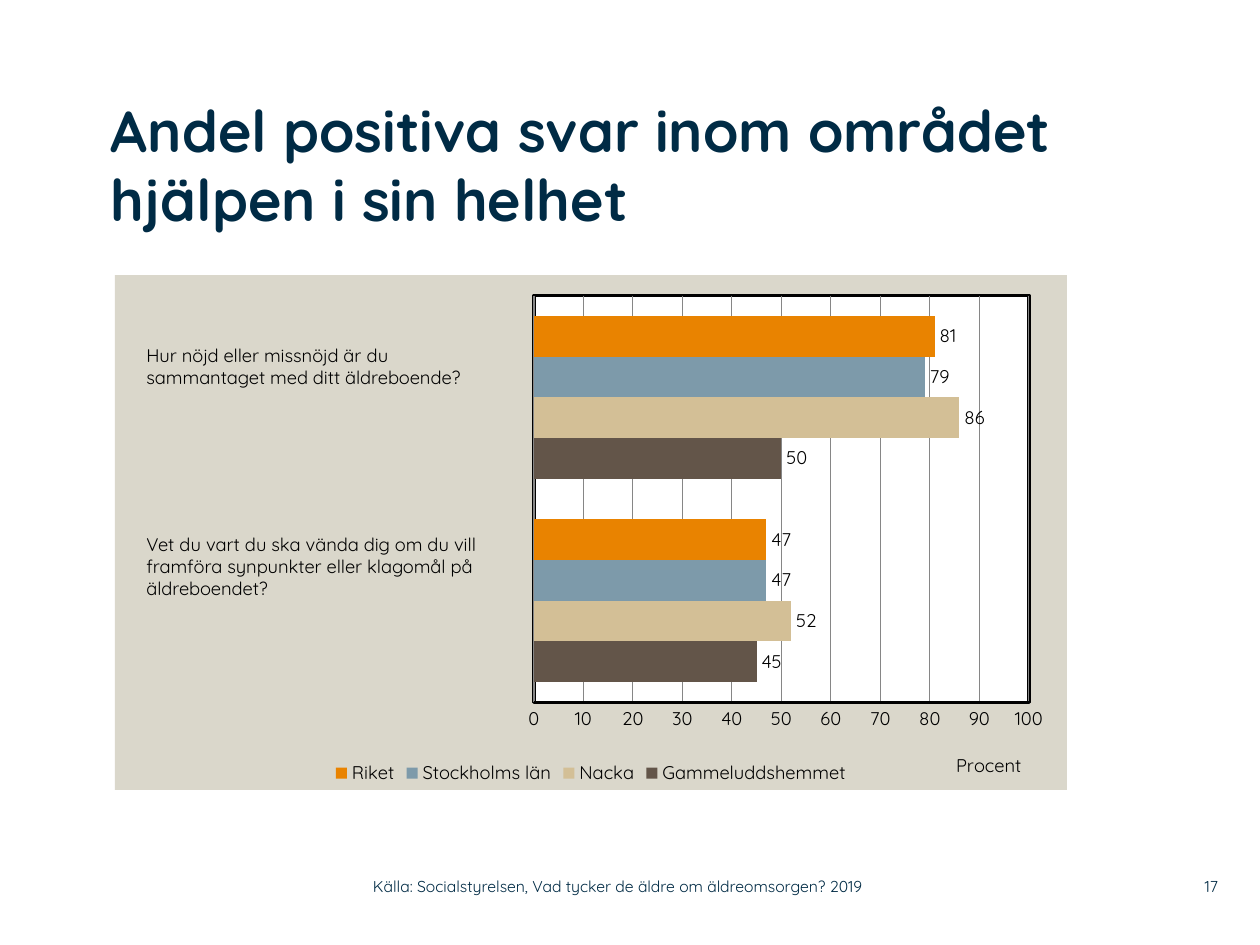
"""Builds a slide with a bar chart of positive answers about elderly care."""
from lxml import etree
from pptx import Presentation
from pptx.chart.data import CategoryChartData
from pptx.dml.color import RGBColor
from pptx.enum.chart import XL_CHART_TYPE as ChartType, XL_LABEL_POSITION as LabelPos
from pptx.enum.chart import XL_LEGEND_POSITION as LegendPos, XL_TICK_MARK as Tick
from pptx.enum.text import MSO_ANCHOR as Anchor, PP_ALIGN as Align
from pptx.oxml import parse_xml
from pptx.oxml.ns import nsdecls, qn
from pptx.util import Pt

PX = 914400 / 126
FONT, BLACK, NAVY = "Quicksand", "000000", "002B45"
rgb = RGBColor.from_string


def add_text(text, box, size=10.5, color=BLACK, bold=False, align=Align.LEFT,
             anchor=Anchor.TOP, inset=True):
    frame = slide.shapes.add_textbox(*[round(n * PX) for n in box]).text_frame
    frame.word_wrap = True
    frame.vertical_anchor = anchor
    if not inset:
        frame.margin_left = frame.margin_right = frame.margin_top = frame.margin_bottom = 0
    for index, line in enumerate(text.split("\n")):
        paragraph = frame.add_paragraph() if index else frame.paragraphs[0]
        paragraph.alignment = align
        run = paragraph.add_run()
        run.text = line
        run.font.name, run.font.size, run.font.bold = FONT, Pt(size), bold
        run.font.color.rgb = rgb(color)


def manual_layout(x, y, size="", target=""):
    return parse_xml(
        f'<c:layout {nsdecls("c")}><c:manualLayout>{target}'
        f'<c:xMode val="edge"/><c:yMode val="edge"/><c:x val="{x}"/><c:y val="{y}"/>{size}'
        '</c:manualLayout></c:layout>')


deck = Presentation()
deck.slide_width, deck.slide_height = round(1260 * PX), round(945 * PX)
slide = deck.slides.add_slide(deck.slide_layouts[6])

answers = [
    ("Gammeluddshemmet", (45, 50), "635549"),
    ("Nacka", (52, 86), "D3BF96"),
    ("Stockholms län", (47, 79), "7D9AAA"),
    ("Riket", (47, 81), "E98300"),
]
shares = CategoryChartData(number_format="0")
shares.categories = ["1", "2"]
for area, values, _ in answers:
    shares.add_series(area, values)

chart = slide.shapes.add_chart(
    ChartType.BAR_CLUSTERED, *[round(n * PX) for n in (115, 275, 952, 515)], shares).chart
chart.has_title = False
chart.font.name, chart.font.size = FONT, Pt(10.5)
chart.font.color.rgb = rgb(BLACK)
chart.has_legend = True
chart.legend.position = LegendPos.BOTTOM
chart.legend.include_in_layout = False

bars = chart.plots[0]
bars.gap_width, bars.overlap, bars.vary_by_categories = 100, 0, False
for series, (_, _, color) in zip(bars.series, answers):
    series.format.fill.solid()
    series.format.fill.fore_color.rgb = rgb(color)
    series.data_labels.show_value = True
    series.data_labels.position = LabelPos.OUTSIDE_END

chart.category_axis.visible = False
percent = chart.value_axis
percent.minimum_scale, percent.maximum_scale, percent.major_unit = 0, 100, 10
percent.major_tick_mark = percent.minor_tick_mark = Tick.NONE
percent.format.line.color.rgb = rgb(BLACK)
percent.format.line.width = Pt(2)
percent.has_major_gridlines = True
percent.major_gridlines.format.line.color.rgb = rgb("868686")
percent.major_gridlines.format.line.width = Pt(0.75)
percent.axis_title.text_frame.text = "Procent"
caption = percent.axis_title.text_frame.paragraphs[0].runs[0].font
caption.name, caption.size, caption.bold = FONT, Pt(10.5), False
caption.color.rgb = rgb(BLACK)

title_xml = percent.axis_title._element
for old in title_xml.findall(qn("c:layout")):
    title_xml.remove(old)
title_xml.find(qn("c:tx")).addnext(manual_layout(0.88, 0.92))

chart_xml = chart._chartSpace.chart
plot_xml = chart_xml.plotArea
for old in plot_xml.findall(qn("c:layout")):
    plot_xml.remove(old)
plot_xml.insert(0, manual_layout(
    0.44, 0.04, '<c:w val="0.52"/><c:h val="0.79"/>', '<c:layoutTarget val="inner"/>'))


def fill_xml(color, line):
    return parse_xml(
        f'<c:spPr {nsdecls("c", "a")}><a:solidFill><a:srgbClr val="{color}"/></a:solidFill>'
        f'{line}</c:spPr>')


border = f'<a:ln w="25400"><a:solidFill><a:srgbClr val="{BLACK}"/></a:solidFill></a:ln>'
plot_xml.append(fill_xml("FFFFFF", border))
chart_xml.addnext(fill_xml("DAD7CB", "<a:ln><a:noFill/></a:ln>"))

add_text("Andel positiva svar inom området hjälpen i sin helhet", (111, 95, 958, 179),
         size=33, color=NAVY, bold=True, inset=False)
add_text("Hur nöjd eller missnöjd är du\nsammantaget med ditt äldreboende?", (134, 338, 375, 57))
add_text("Vet du vart du ska vända dig om du vill framföra synpunkter eller klagomål på "
         "äldreboendet?", (134, 527, 374, 79))
footer = dict(size=9, color=NAVY, anchor=Anchor.MIDDLE, inset=False)
add_text("17", (1159, 868, 59, 37), align=Align.RIGHT, **footer)
add_text("Källa: Socialstyrelsen, Vad tycker de äldre om äldreomsorgen? 2019",
         (373, 868, 558, 37), **footer)

deck.save("out.pptx")
